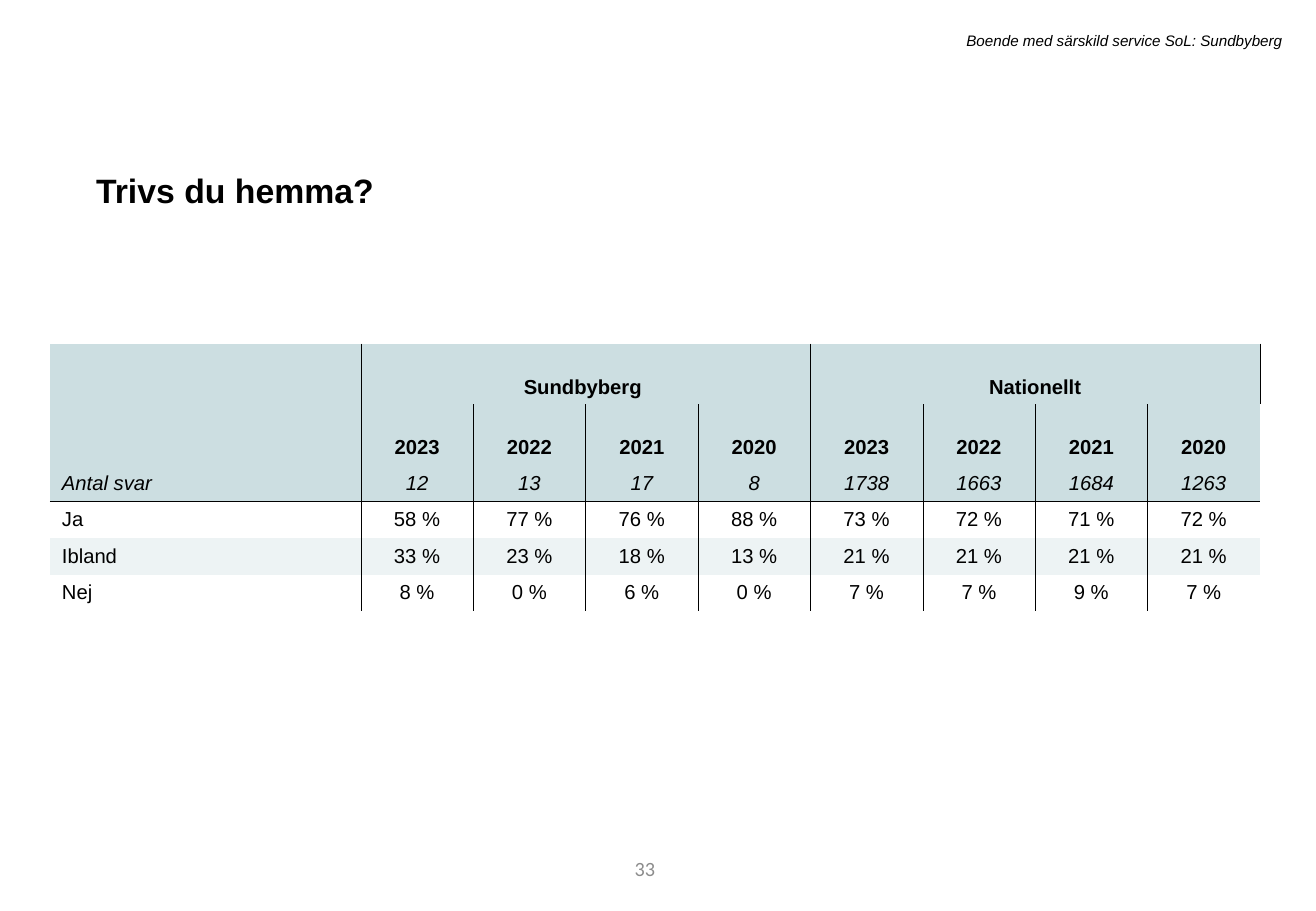
import pptx
import pptx.util
import pptx.dml.color
import pptx.enum.text
import pptx.oxml

Inches, Pt = pptx.util.Inches, pptx.util.Pt
ALIGN, ANCHOR = pptx.enum.text.PP_ALIGN, pptx.enum.text.MSO_ANCHOR
FIT = pptx.enum.text.MSO_AUTO_SIZE
HUE = {"ink": "000000", "grey": "8C8C8C", "head": "CCDEE1", "band": "EDF3F4", "bare": "FFFFFF"}
NS = 'xmlns:a="http://schemas.openxmlformats.org/drawingml/2006/main"'


def write(frame, text, size, align, hue="ink", face="Arial", bold=False, slant=False):
    frame.text = text
    par = frame.paragraphs[0]
    par.alignment = align
    font = par.font
    font.name, font.size, font.bold, font.italic = face, Pt(size), bold, slant
    font.color.rgb = pptx.dml.color.RGBColor.from_string(HUE[hue])
    return par


def rule(cell, sides):
    """Draw thin lines on the given sides (of L, R, T, B) and none on the rest."""
    props = cell._tc.get_or_add_tcPr()
    for side in "LRTB":
        fill = f'<a:solidFill><a:srgbClr val="{HUE["ink"]}"/></a:solidFill>'
        if side not in sides:
            fill = "<a:noFill/>"
        props.append(pptx.oxml.parse_xml(f'<a:ln{side} {NS} w="3175">{fill}</a:ln{side}>'))


deck = pptx.Presentation()
deck.slide_width, deck.slide_height = Inches(10.83), Inches(7.5)
slide = deck.slides.add_slide(deck.slide_layouts[5])

# Title
title = slide.shapes.title
title.left, title.top, title.width, title.height = map(Inches, (0.69, 1.28, 9.4, 0.47))
frame = title.text_frame
frame.auto_size, frame.vertical_anchor = FIT.NONE, ANCHOR.TOP
par = write(frame, "Trivs du hemma?", 20, ALIGN.LEFT, bold=True)
par.line_spacing, par.space_before = 1.2, Pt(10)

# Table
years = ["2023", "2022", "2021", "2020"]
rows = [
    ["", "Sundbyberg ", "", "", "", "Nationellt", "", "", ""],
    [""] + years * 2,
    ["Antal svar", "12", "13", "17", "8", "1738", "1663", "1684", "1263"],
    ["Ja", "58 %", "77 %", "76 %", "88 %", "73 %", "72 %", "71 %", "72 %"],
    ["Ibland", "33 %", "23 %", "18 %", "13 %", "21 %", "21 %", "21 %", "21 %"],
    ["Nej", "8 %", "0 %", "6 %", "0 %", "7 %", "7 %", "9 %", "7 %"],
]
fills = ["head"] * 3 + ["bare", "band", "bare"]
highs = [0.5, 0.5, 0.3, 0.3, 0.3, 0.3]
last = len(rows[0]) - 1

table = slide.shapes.add_table(
    len(rows), last + 1, Inches(0.41), Inches(2.83), Inches(9.96), Inches(sum(highs))
).table
table.first_row = table.horz_banding = False
for c, col in enumerate(table.columns):
    col.width = Inches(0.925 if c else 2.56)

for r, row in enumerate(rows):
    table.rows[r].height = Inches(highs[r])
    edges = range(1, last + 1) if r else (1, 5, 9)
    for c, text in enumerate(row):
        cell = table.cell(r, c)
        sides = "L" if c in edges else ""
        # A group heading carries the right edge of its whole span
        right = c + 4 if r == 0 and c in (1, 5) else c + 1
        sides += "R" if right in edges else ""
        sides += {2: "B", 3: "T"}.get(r, "")
        rule(cell, sides)
        cell.fill.solid()
        cell.fill.fore_color.rgb = pptx.dml.color.RGBColor.from_string(HUE[fills[r]])
        cell.vertical_anchor = ANCHOR.BOTTOM if r < 2 else ANCHOR.MIDDLE
        write(cell.text_frame, text, 12, ALIGN.CENTER if c else ALIGN.LEFT,
              bold=r < 2, slant=r == 2)

for c in (1, 5):
    table.cell(0, c).merge(table.cell(0, c + 3))

# Header and page number
head = slide.shapes.add_textbox(*map(Inches, (1.79, 0.21, 8.86, 0.25))).text_frame
head.word_wrap = True
write(head, "Boende med särskild service SoL: Sundbyberg", 9, ALIGN.RIGHT, slant=True)

page = slide.shapes.add_textbox(*map(Inches, (3.05, 6.95, 2.44, 0.4))).text_frame
page.word_wrap, page.vertical_anchor = True, ANCHOR.MIDDLE
write(page, "33", 12, ALIGN.RIGHT, "grey", "Calibri")

deck.save("out.pptx")
